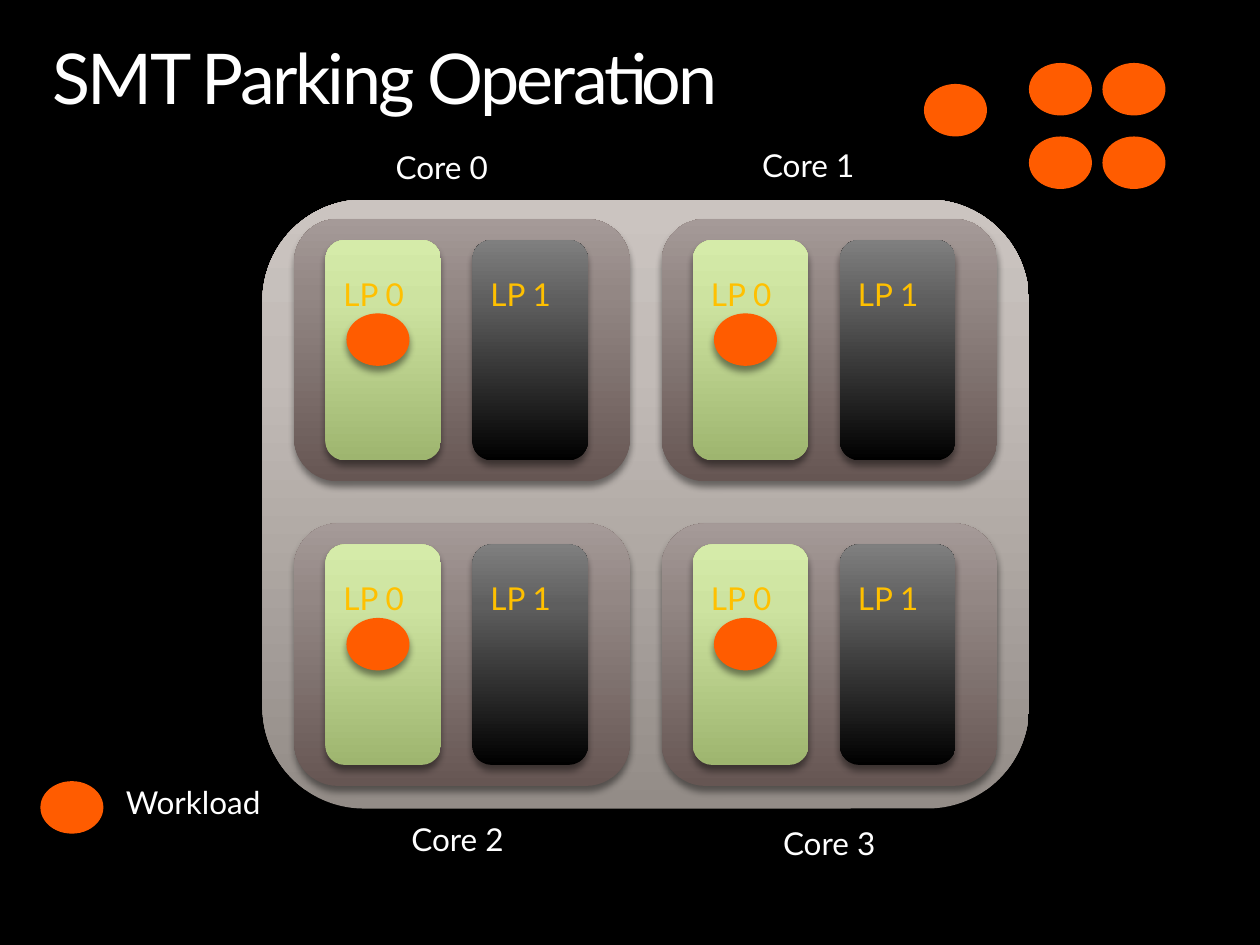
from copy import deepcopy
from itertools import product

from lxml import etree
from pptx import Presentation
from pptx import util as u
from pptx.dml.color import RGBColor
from pptx.enum import shapes, text
from pptx.oxml import ns

COLUMNS, ROWS = 120, 90
CHIP = ("938C87", "C2BBB7", "CBC4C0")
CORE = ("665653", "938784", "A59A98")
ACTIVE = ("9EB56F", "CDE3A0", "D5EBA9")
PARKED = ("000000", "5E5E5E", "7F7F7F")
WHITE, AMBER, ORANGE, BLACK = "FFFFFF", "FFC000", "FF5C00", "000000"


def color(value):
    """Turn a hex string into a colour."""
    return RGBColor.from_string(value)


class Board:
    """Style and current slide, measured in grid columns and rows."""

    font = "Lato"
    size = 18

    def __init__(self, presentation):
        """Add a blank black slide and derive the grid from its size."""
        self.slide = presentation.slides.add_slide(presentation.slide_layouts[6])
        self.slide.background.fill.solid()
        self.slide.background.fill.fore_color.rgb = color(BLACK)
        self.column = presentation.slide_width / COLUMNS
        self.row = presentation.slide_height / ROWS

    def place(self, left, top, width, height):
        """Convert grid units to slide lengths."""
        return (round(left * self.column), round(top * self.row),
                round(width * self.column), round(height * self.row))

    def set_line(self, text_frame, words, ink, size):
        """Put one styled, left-aligned line into a text frame."""
        text_frame.text = words
        text_frame.word_wrap = True
        paragraph = text_frame.paragraphs[0]
        paragraph.alignment = text.PP_ALIGN.LEFT
        run = paragraph.runs[0]
        run.font.name = self.font
        run.font.size = u.Pt(size)
        run.font.color.rgb = color(ink)
        return paragraph

    def label(self, words, left, top, width=17):
        """Add a plain white caption."""
        box = self.slide.shapes.add_textbox(*self.place(left, top, width, 5))
        self.set_line(box.text_frame, words, WHITE, self.size)

    def title(self, words):
        """Add the tightly spaced heading."""
        box = self.slide.shapes.add_textbox(*self.place(5, 4.2, 110, 7.3))
        frame = box.text_frame
        frame.margin_left = frame.margin_top = 0
        frame.margin_right = frame.margin_bottom = 0
        paragraph = self.set_line(frame, words, WHITE, 40)
        paragraph.line_spacing = 0.9
        paragraph.runs[0].font._element.set("spc", "-150")

    def shape(self, kind, *place):
        """Add an outline-free shape with a soft shadow below it."""
        shape = self.slide.shapes.add_shape(kind, *self.place(*place))
        shape.line.fill.background()
        shape.shadow.inherit = False
        effects = shape._element.spPr.find(ns.qn("a:effectLst"))
        shadow = etree.SubElement(
            effects, ns.qn("a:outerShdw"), blurRad=str(u.Pt(4)),
            dist=str(u.Pt(3)), dir="5400000", rotWithShape="0")
        tint = etree.SubElement(shadow, ns.qn("a:srgbClr"), val=BLACK)
        etree.SubElement(tint, ns.qn("a:alpha"), val="43000")
        return shape

    def panel(self, shades, *place):
        """Add a rounded panel shaded from bottom to top."""
        shape = self.shape(shapes.MSO_SHAPE.ROUNDED_RECTANGLE, *place)
        shape.fill.gradient()
        stops = shape._element.spPr.find(".//" + ns.qn("a:gsLst"))
        stops.append(deepcopy(stops[-1]))
        for stop, shade, position in zip(shape.fill.gradient_stops, shades, (0, 0.72, 1)):
            stop.color.rgb = color(shade)
            stop.position = position
        shape.fill.gradient_angle = 90
        return shape

    def processor(self, words, shades, left, top):
        """Add a logical processor with its name near the top."""
        frame = self.panel(shades, left, top, 11, 21).text_frame
        frame.vertical_anchor = text.MSO_ANCHOR.TOP
        frame.margin_top = u.Inches(0.23)
        self.set_line(frame, words, AMBER, self.size)

    def workload(self, left, top):
        """Add a workload dot."""
        shape = self.shape(shapes.MSO_SHAPE.OVAL, left, top, 6, 5)
        shape.fill.solid()
        shape.fill.fore_color.rgb = color(ORANGE)

    def core(self, left, top):
        """Add a core with one busy and one parked processor."""
        self.panel(CORE, left, top, 32, 25)
        self.processor("LP 0", ACTIVE, left + 3, top + 2)
        self.processor("LP 1", PARKED, left + 17, top + 2)
        self.workload(left + 5, top + 9)


def main():
    """Build and save the slide."""
    presentation = Presentation()
    presentation.slide_width = u.Inches(10)
    presentation.slide_height = u.Inches(7.5)
    board = Board(presentation)

    board.panel(CHIP, 25, 19, 73, 58)
    board.title("SMT Parking Operation")
    for row, column in product(range(2), range(2)):
        board.core(28 + 35 * column, 20.85 + 29 * row)

    captions = ((36.5, 13.5), (71.4, 13.3), (38, 77.5), (73.4, 77.9))
    for number, (left, top) in enumerate(captions):
        board.label(f"Core {number}", left, top)

    board.workload(3.85, 74.4)
    board.label("Workload", 10.8, 74, 24)

    board.workload(88, 8)
    for left, top in product((98, 105), (6, 13)):
        board.workload(left, top)

    presentation.save("out.pptx")


if __name__ == "__main__":
    main()
